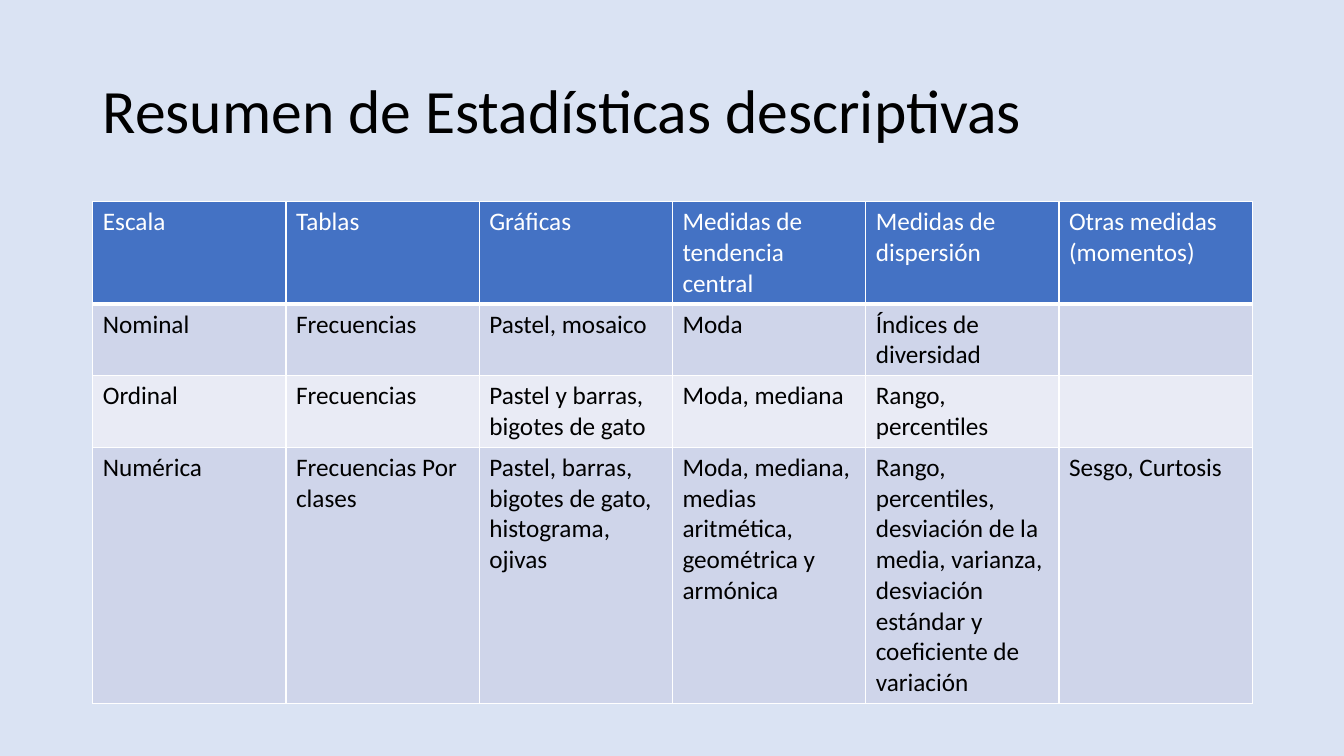
from lxml.etree import SubElement
from pptx import Presentation
from pptx.dml.color import RGBColor
from pptx.enum.text import MSO_ANCHOR, MSO_AUTO_SIZE, PP_ALIGN
from pptx.oxml.ns import qn
from pptx.util import Inches, Pt

COLORS = {
    "background": "DAE3F3",
    "header": "4472C4",
    "odd_row": "CFD5EA",
    "even_row": "E9EBF5",
    "black": "000000",
    "white": "FFFFFF",
}
ROWS = [
    ["Escala", "Tablas", "Gráficas", "Medidas de tendencia central",
     "Medidas de dispersión", "Otras medidas (momentos)"],
    ["Nominal", "Frecuencias", "Pastel, mosaico", "Moda", "Índices de diversidad", ""],
    ["Ordinal", "Frecuencias", "Pastel y barras, bigotes de gato", "Moda, mediana",
     "Rango, percentiles", ""],
    ["Numérica", "Frecuencias Por clases",
     "Pastel, barras, bigotes de gato, histograma, ojivas",
     "Moda, mediana, medias aritmética, geométrica y armónica",
     "Rango, percentiles, desviación de la media, varianza, desviación estándar "
     "y coeficiente de variación",
     "Sesgo, Curtosis"],
]


def rgb(name):
    """Return the named colour."""
    return RGBColor.from_string(COLORS[name])


def write_text(frame, text, size=18, color="black", line_spacing=None):
    """Write one left-aligned paragraph with its format."""
    frame.word_wrap = True
    paragraph = frame.paragraphs[0]
    paragraph.alignment = PP_ALIGN.LEFT
    if line_spacing:
        paragraph.line_spacing = line_spacing
    if text:
        paragraph.add_run().text = text
    for font in [paragraph.font] + [run.font for run in paragraph.runs]:
        font.name = "Calibri"
        font.size = Pt(size)
        font.bold = False
        font.color.rgb = rgb(color)


def set_borders(cell, bottom_width):
    """Give a cell white borders, with its own width at the bottom."""
    properties = cell._tc.get_or_add_tcPr()
    for side, width in (("L", 1), ("R", 1), ("T", 1), ("B", bottom_width)):
        line = SubElement(properties, qn(f"a:ln{side}"), w=str(Pt(width)))
        fill = SubElement(line, qn("a:solidFill"))
        SubElement(fill, qn("a:srgbClr"), val=COLORS["white"])


def add_title(slide, text):
    """Place and fill the title placeholder."""
    title = slide.shapes.title
    title.left, title.top = Inches(0.92), Inches(0.4)
    title.width, title.height = Inches(11.5), Inches(1.45)
    frame = title.text_frame
    frame.vertical_anchor = MSO_ANCHOR.MIDDLE
    frame.auto_size = MSO_AUTO_SIZE.NONE
    write_text(frame, text, size=44, line_spacing=0.9)


def add_summary_table(slide, rows):
    """Add the table with a blue header and banded rows."""
    row_height = Inches(0.41)
    table = slide.shapes.add_table(
        len(rows), len(rows[0]), Inches(0.92), Inches(2),
        Inches(11.5), row_height * len(rows)).table
    for row_index, texts in enumerate(rows):
        table.rows[row_index].height = row_height
        is_header = row_index == 0
        band = "header" if is_header else "odd_row" if row_index % 2 else "even_row"
        for column_index, text in enumerate(texts):
            cell = table.cell(row_index, column_index)
            set_borders(cell, 3 if is_header else 1)
            cell.fill.solid()
            cell.fill.fore_color.rgb = rgb(band)
            write_text(cell.text_frame, text, color="white" if is_header else "black")


def main():
    """Build and save the slide."""
    presentation = Presentation()
    presentation.slide_width = Inches(13.33)
    presentation.slide_height = Inches(7.5)
    slide = presentation.slides.add_slide(presentation.slide_layouts[5])
    slide.background.fill.solid()
    slide.background.fill.fore_color.rgb = rgb("background")
    add_title(slide, "Resumen de Estadísticas descriptivas")
    add_summary_table(slide, ROWS)
    presentation.save("out.pptx")


if __name__ == "__main__":
    main()
